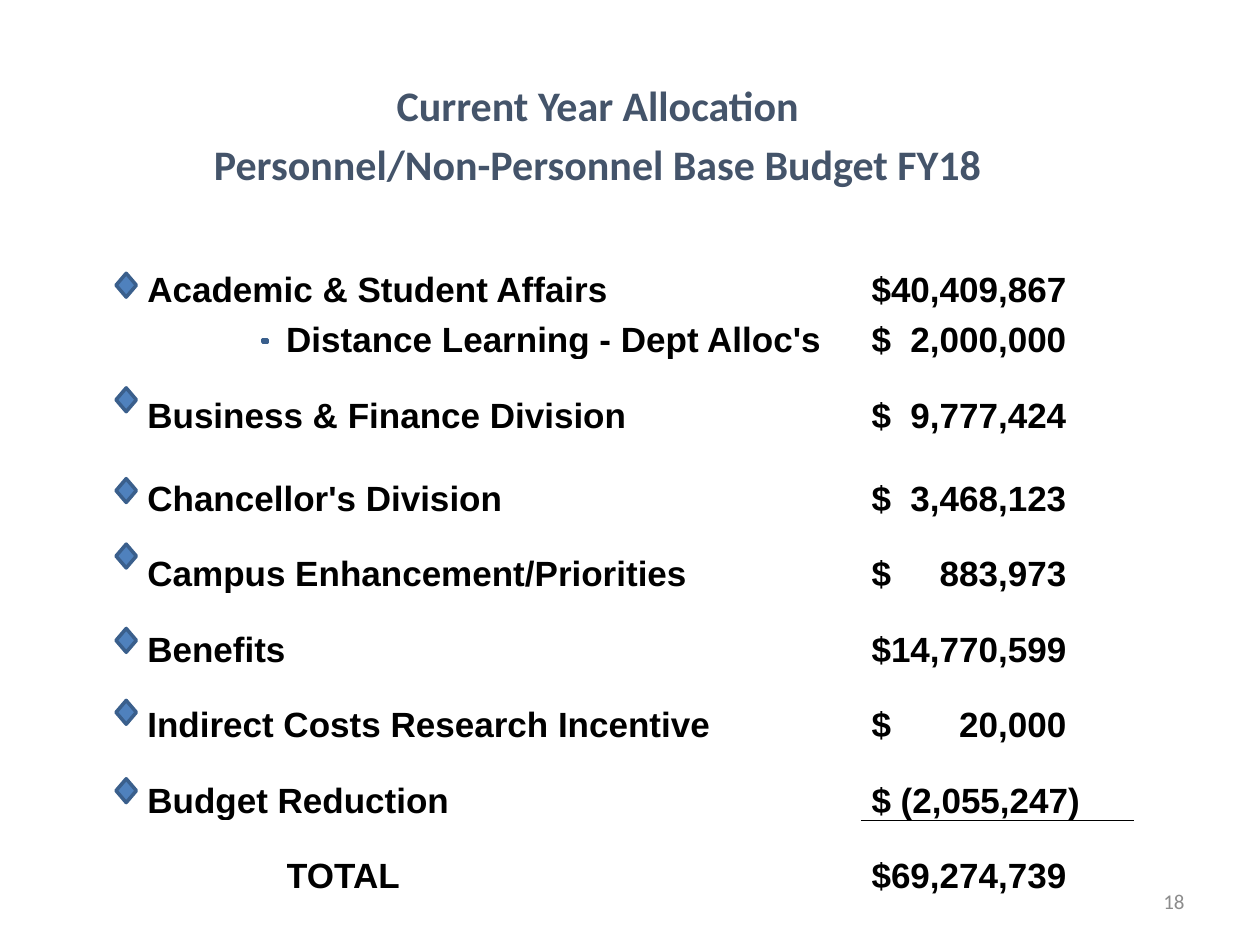
from dataclasses import dataclass

from lxml import etree
from pptx import Presentation
from pptx.dml.color import RGBColor
from pptx.enum.shapes import MSO_SHAPE
from pptx.enum.text import MSO_ANCHOR, PP_ALIGN
from pptx.oxml.ns import qn
from pptx.util import Cm, Pt

DIAMOND, MINUS = MSO_SHAPE.DIAMOND, MSO_SHAPE.MATH_MINUS
LEFT, CENTER, RIGHT = PP_ALIGN.LEFT, PP_ALIGN.CENTER, PP_ALIGN.RIGHT
BOTTOM, MIDDLE = MSO_ANCHOR.BOTTOM, MSO_ANCHOR.MIDDLE


@dataclass(frozen=True)
class Theme:
    head: str = "44546A"
    body: str = "000000"
    page: str = "8C8C8C"
    mark: str = "4F81BD"
    edge: str = "3A5F8C"
    head_font: str = "Calibri"
    body_font: str = "Arial"
    head_size: int = 24
    body_size: int = 20
    page_size: int = 12


THEME = Theme()
COLS = [1.9, 2.8, 7.34, 4.26, 5.51, 0.15]
ROWS = [2.03, 1.19, 0.86, 1.52, 1.02, 1.52, 1.68] + [1.52] * 5
TITLE = ["Current Year Allocation", "Personnel/Non-Personnel Base Budget FY18"]
FIRST = 3
AMOUNT = 4
# label, first column, last column, amount
BUDGET = [
    ("Academic & Student Affairs", 1, 2, "$40,409,867"),
    ("Distance Learning - Dept Alloc's", 2, 3, "$\t2,000,000"),
    ("Business & Finance Division", 1, 2, "$\t9,777,424"),
    ("Chancellor's Division", 1, 2, "$\t3,468,123"),
    ("Campus Enhancement/Priorities", 1, 3, "$\t883,973"),
    ("Benefits", 1, 2, "$14,770,599"),
    ("Indirect Costs Research Incentive", 1, 3, "$\t20,000"),
    ("Budget Reduction", 1, 2, "$ (2,055,247)"),
    ("TOTAL", 2, 2, "$69,274,739"),
]
MARKS = [5.51, 7.82, 9.65, 10.97, 12.67, 14.12, 15.7]


def write(frame, text, font, size, color, align=LEFT, bold=True):
    para = frame.paragraphs[0]
    para.alignment = align
    run = para.add_run()
    run.text = text
    run.font.name = font
    run.font.size = Pt(size)
    run.font.bold = bold
    run.font.color.rgb = RGBColor.from_string(color)
    return para


def set_tab(para, pos):
    """Add a right-aligned tab stop."""
    tabs = etree.SubElement(para._p.get_or_add_pPr(), qn("a:tabLst"))
    etree.SubElement(tabs, qn("a:tab"), pos=str(pos), algn="r")


def rule(cell, side):
    """Draw a thin line on one side (lnT or lnB) of a cell."""
    line = etree.Element(qn("a:" + side), w=str(Pt(0.5)))
    fill = etree.SubElement(line, qn("a:solidFill"))
    etree.SubElement(fill, qn("a:srgbClr"), val=THEME.body)
    cell._tc.get_or_add_tcPr().insert(0, line)


def add_grid(slide):
    frame = slide.shapes.add_table(
        len(ROWS), len(COLS), Cm(1.07), Cm(0.64), Cm(sum(COLS)), Cm(sum(ROWS)))
    table = frame.table
    table.first_row = table.horz_banding = False
    for col, width in zip(table.columns, COLS):
        col.width = Cm(width)
    for row, height in zip(table.rows, ROWS):
        row.height = Cm(height)
    for cell in table.iter_cells():
        cell.fill.background()
        cell.vertical_anchor = BOTTOM
        cell.margin_left = cell.margin_right = 0
        cell.margin_top = cell.margin_bottom = 0
    return table


def fill_grid(table):
    for row, text in enumerate(TITLE):
        cell = table.cell(row, 0)
        cell.merge(table.cell(row, len(COLS) - 1))
        write(cell.text_frame, text, THEME.head_font, THEME.head_size,
              THEME.head, CENTER)
    style = THEME.body_font, THEME.body_size, THEME.body
    for row, (label, start, end, amount) in enumerate(BUDGET, FIRST):
        cell = table.cell(row, start)
        if end > start:
            cell.merge(table.cell(row, end))
        write(cell.text_frame, label, *style)
        cell = table.cell(row, AMOUNT)
        cell.margin_left = Cm(0.2)
        para = write(cell.text_frame, amount, *style)
        if "\t" in amount:
            set_tab(para, Cm(3.93))
    last = len(ROWS) - 1
    rule(table.cell(last - 1, AMOUNT), "lnB")
    rule(table.cell(last, AMOUNT), "lnT")


def add_mark(slide, kind, left, top, width, height):
    mark = slide.shapes.add_shape(
        kind, Cm(left), Cm(top), Cm(width), Cm(height))
    mark.shadow.inherit = False
    mark.fill.solid()
    mark.fill.fore_color.rgb = RGBColor.from_string(THEME.mark)
    mark.line.color.rgb = RGBColor.from_string(THEME.edge)
    mark.line.width = Pt(2)


def add_page(slide, text):
    box = slide.shapes.add_textbox(Cm(18.21), Cm(17.65), Cm(5.92), Cm(1.02))
    frame = box.text_frame
    frame.word_wrap = True
    frame.vertical_anchor = MIDDLE
    write(frame, text, THEME.head_font, THEME.page_size, THEME.page,
          RIGHT, False)


def main():
    deck = Presentation()
    deck.slide_width, deck.slide_height = Cm(25.4), Cm(19.05)
    slide = deck.slides.add_slide(deck.slide_layouts[6])
    add_page(slide, "18")
    fill_grid(add_grid(slide))
    for top in MARKS:
        add_mark(slide, DIAMOND, 2.34, top, 0.41, 0.48)
    add_mark(slide, MINUS, 5.28, 6.78, 0.13, 0.18)
    deck.save("out.pptx")


if __name__ == "__main__":
    main()
